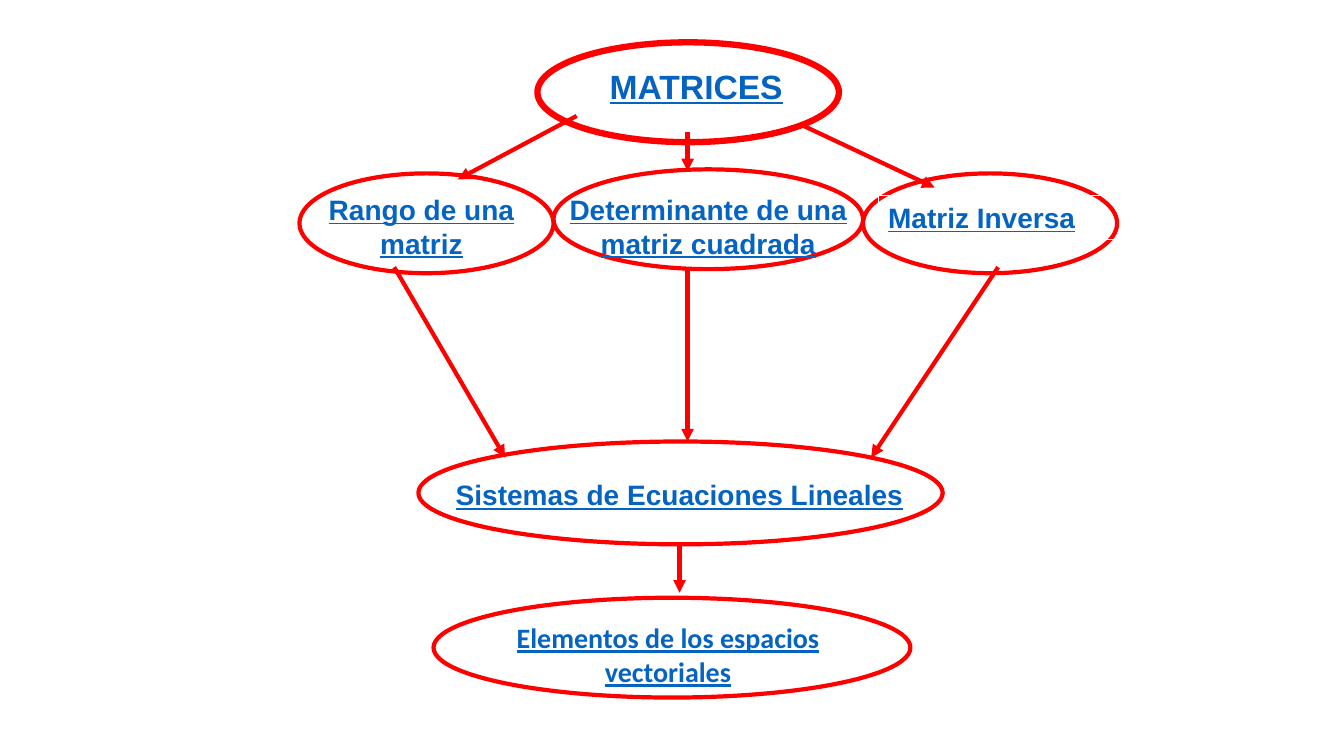
"""Build the concept map slide about matrices."""
import pptx
import pptx.util
import pptx.dml.color
import pptx.enum.shapes
import pptx.enum.text
from lxml import etree
from pptx.util import Inches, Pt

COLORS = {"red": "FF0000", "link": "0563C1", "white": "FFFFFF"}
CENTER = pptx.enum.text.PP_ALIGN.CENTER
LEFT = pptx.enum.text.PP_ALIGN.LEFT

ELLIPSES = [
    ((5.33, 0.42, 2.99, 0.99), 4.5),
    ((2.97, 1.72, 2.52, 0.99), 3),
    ((8.56, 1.72, 2.52, 0.99), 3),
    ((4.15, 4.38, 5.2, 1.02), 3),
    ((5.49, 1.68, 3.07, 0.99), 3),
    ((4.3, 5.93, 4.73, 0.99), 3),
]
LABELS = [
    ("MATRICES", (5.49, 0.6, 2.83, 0.5), 24, "Arial", CENTER, None),
    ("Rango de una matriz", (3.04, 1.86, 2.28, 0.77), 20, "Arial", CENTER, None),
    ("Matriz Inversa", (8.71, 1.94, 2.44, 0.44), 20, "Arial", LEFT, "white"),
    ("Determinante de una matriz cuadrada", (5.49, 1.86, 3.07, 0.77), 20, "Arial", CENTER, None),
    ("Sistemas de Ecuaciones Lineales", (4.38, 4.69, 4.72, 0.43), 20, "Arial", CENTER, None),
    ("Elementos de los espacios vectoriales", (4.38, 6.11, 4.49, 0.77), 20, "Calibri", CENTER, None),
]
ARROWS = [
    (5.72, 1.15, 4.54, 1.78),
    (7.93, 1.23, 9.27, 1.86),
    (6.82, 1.31, 6.82, 1.7),
    (3.91, 2.65, 5.01, 4.54),
    (6.82, 2.65, 6.82, 4.38),
    (9.9, 2.65, 8.64, 4.54),
    (6.74, 5.4, 6.74, 5.88),
]


def rgb(name):
    """Return the named colour."""
    return pptx.dml.color.RGBColor.from_string(COLORS[name])


def set_line(shape, name, width):
    """Give a shape a solid line."""
    shape.line.color.rgb = rgb(name)
    shape.line.width = Pt(width)


def add_ellipse(s, box, width):
    """Draw an unfilled red ellipse."""
    kind = pptx.enum.shapes.MSO_SHAPE.OVAL
    sp = s.shapes.add_shape(kind, *map(Inches, box))
    sp.shadow.inherit = False
    sp.fill.background()
    set_line(sp, "red", width)


def add_label(s, text, box, size, font, align, border):
    """Write an underlined bold label."""
    sp = s.shapes.add_textbox(*map(Inches, box))
    if border:
        set_line(sp, border, 0.75)
    tf = sp.text_frame
    tf.word_wrap = True
    tf.auto_size = pptx.enum.text.MSO_AUTO_SIZE.SHAPE_TO_FIT_TEXT
    p = tf.paragraphs[0]
    p.add_run().text = text
    p.alignment = align
    p.font.name = font
    p.font.size = Pt(size)
    p.font.bold = True
    p.font.underline = True
    p.font.color.rgb = rgb("link")


def add_arrow(s, ends):
    """Draw a red arrow."""
    kind = pptx.enum.shapes.MSO_CONNECTOR.STRAIGHT
    sp = s.shapes.add_connector(kind, *map(Inches, ends))
    set_line(sp, "red", 3)
    ln = sp.line._get_or_add_ln()
    etree.SubElement(ln, pptx.oxml.ns.qn("a:tailEnd"), type="triangle")
    etree.SubElement(sp._element.spPr, pptx.oxml.ns.qn("a:effectLst"))


def main():
    """Build and save the slide."""
    prs = pptx.Presentation()
    prs.slide_width, prs.slide_height = Inches(13.33), Inches(7.5)
    s = prs.slides.add_slide(prs.slide_layouts[6])
    s.background.fill.solid()
    s.background.fill.fore_color.rgb = rgb("white")
    for box, width in ELLIPSES:
        add_ellipse(s, box, width)
    for label in LABELS:
        add_label(s, *label)
    for ends in ARROWS:
        add_arrow(s, ends)
    prs.save("out.pptx")


if __name__ == "__main__":
    main()
